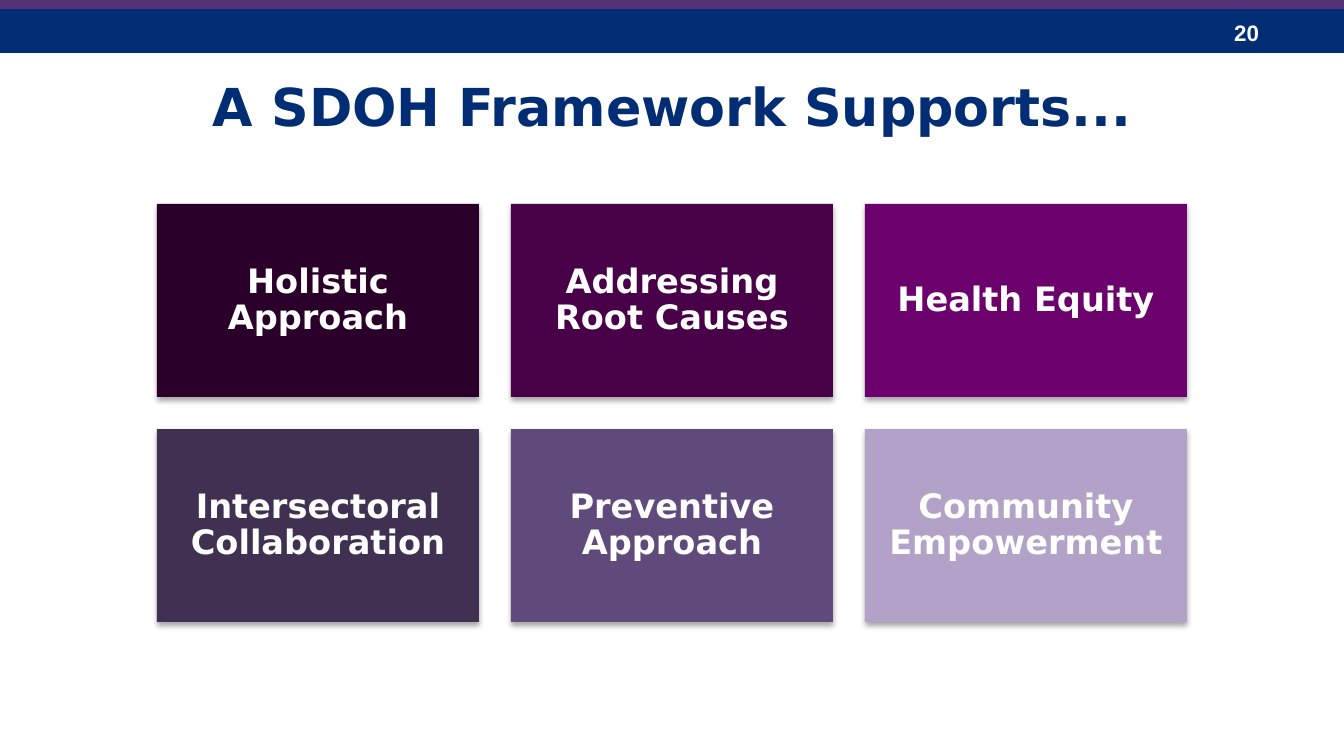
from lxml.etree import SubElement
from pptx import Presentation
from pptx.dml.color import RGBColor
from pptx.enum.shapes import MSO_SHAPE as Shape
from pptx.enum.text import MSO_ANCHOR as Anchor, PP_ALIGN as Align
from pptx.oxml.ns import qn
from pptx.util import Pt

PX = 914400 / 134.4  # EMU in one px
WIDE, HIGH = 1344, 756

NAVY = RGBColor(0x00, 0x2D, 0x73)
VIOLET = RGBColor(0x55, 0x32, 0x78)
WHITE = RGBColor(0xFF, 0xFF, 0xFF)

CARDS = [
    ("Holistic Approach", RGBColor(0x2A, 0x00, 0x2A)),
    ("Addressing Root Causes", RGBColor(0x48, 0x00, 0x48)),
    ("Health Equity", RGBColor(0x6C, 0x00, 0x6C)),
    ("Intersectoral Collaboration", RGBColor(0x40, 0x31, 0x52)),
    ("Preventive Approach", RGBColor(0x60, 0x4A, 0x7B)),
    ("Community Empowerment", RGBColor(0xB3, 0xA2, 0xC7)),
]


def px(*sizes):
    return [round(size * PX) for size in sizes]


def add_rect(slide, box, fill):
    rect = slide.shapes.add_shape(Shape.RECTANGLE, *px(*box))
    rect.shadow.inherit = False
    rect.fill.solid()
    rect.fill.fore_color.rgb = fill
    rect.line.fill.background()
    return rect


def add_shade(shape):
    """Give the shape a soft shadow that falls straight down."""
    effects = shape._element.spPr.find(qn("a:effectLst"))
    shade = SubElement(effects, qn("a:outerShdw"), blurRad="40000",
                       dist="23000", dir="5400000", rotWithShape="0")
    color = SubElement(shade, qn("a:srgbClr"), val="000000")
    SubElement(color, qn("a:alpha"), val="35000")


def set_text(shape, text, size, color, face="DejaVu Sans",
             align=Align.CENTER, anchor=Anchor.MIDDLE):
    frame = shape.text_frame
    frame.word_wrap = True
    frame.vertical_anchor = anchor
    para = frame.paragraphs[0]
    para.text = text
    para.alignment = align
    font = para.font
    font.name, font.size, font.bold = face, Pt(size), True
    font.color.rgb = color
    return frame


def add_head(slide, left, top, width, height):
    """Two bars with the page number at the right."""
    trim = 9
    add_rect(slide, (left, top + trim, width, height - trim), NAVY)
    add_rect(slide, (left, top, width, trim), VIOLET)
    page = slide.shapes.add_textbox(*px(left + width - 123, top + 13, 101, 40))
    set_text(page, "20", 12, WHITE, "Arial", Align.LEFT, Anchor.TOP)


def add_title(slide, *box):
    title = slide.shapes.add_textbox(*px(*box))
    set_text(title, "A SDOH Framework Supports...", 28, NAVY)


def add_grid(slide, left, top, width, height, cols=3, gap=32):
    """Cards in equal rows and columns."""
    rows = len(CARDS) // cols
    wide = (width - gap * (cols - 1)) // cols
    high = (height - gap * (rows - 1)) // rows
    for i, (text, fill) in enumerate(CARDS):
        row, col = divmod(i, cols)
        box = (left + col * (wide + gap), top + row * (high + gap), wide, high)
        card = add_rect(slide, box, fill)
        add_shade(card)
        frame = set_text(card, text, 18, WHITE)
        frame.paragraphs[0].line_spacing = 0.9
        inset = Pt(5)
        frame.margin_left = frame.margin_right = inset
        frame.margin_top = frame.margin_bottom = inset


def main():
    deck = Presentation()
    deck.slide_width, deck.slide_height = px(WIDE, HIGH)
    slide = deck.slides.add_slide(deck.slide_layouts[6])
    add_head(slide, 0, 0, WIDE, 53)
    add_title(slide, 67, 54, 1210, 104)
    add_grid(slide, 157, 204, 1030, 418)
    deck.save("out.pptx")


if __name__ == "__main__":
    main()
